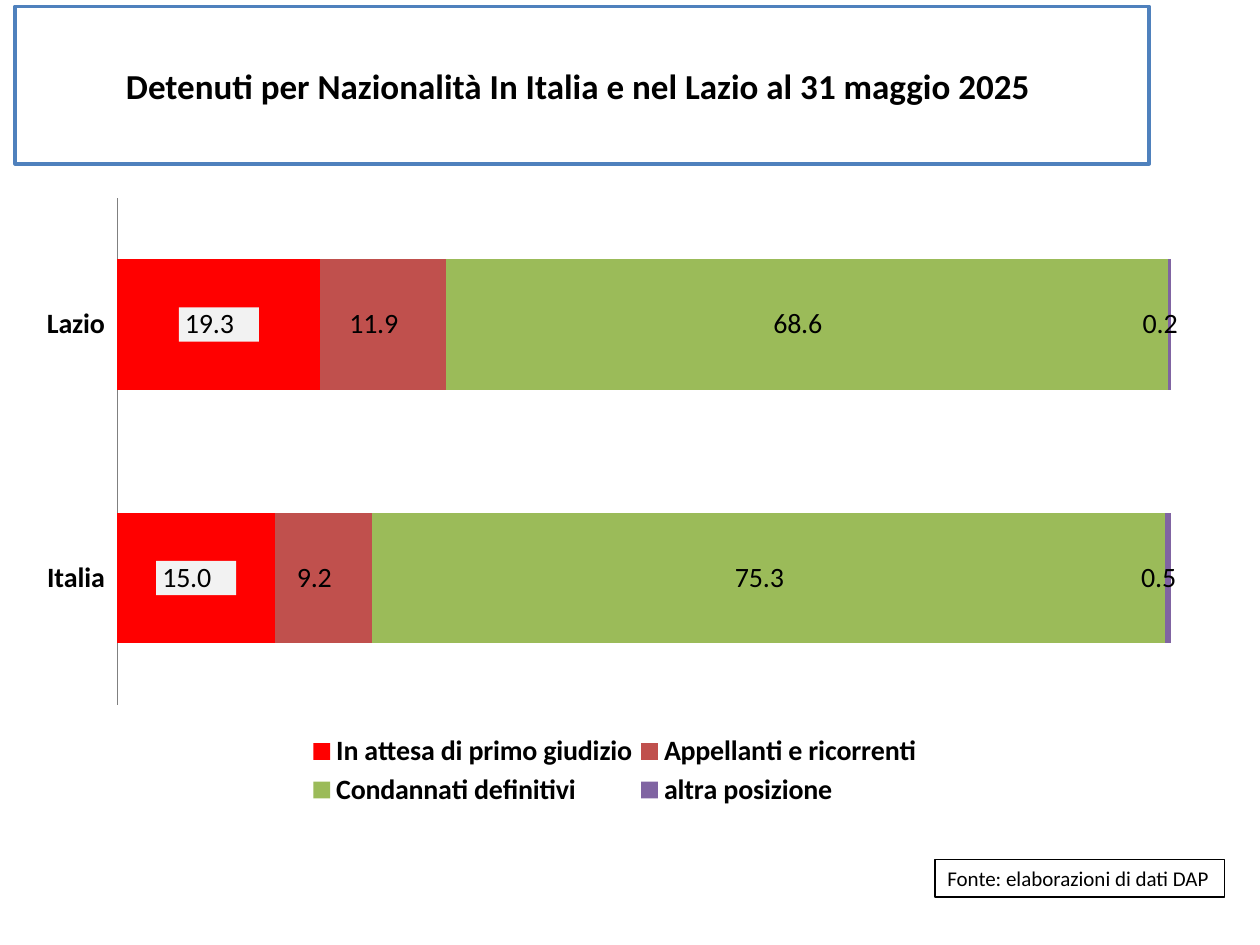
from typing import NamedTuple

from lxml import etree
from pptx import Presentation
from pptx.chart.data import CategoryChartData
from pptx.dml.color import RGBColor
from pptx.enum.chart import XL_CHART_TYPE as ChartType
from pptx.enum.chart import XL_LEGEND_POSITION as LegendPos
from pptx.enum.chart import XL_TICK_LABEL_POSITION as LabelPos
from pptx.enum.chart import XL_TICK_MARK as TickMark
from pptx.enum.text import MSO_ANCHOR, PP_ALIGN
from pptx.oxml import parse_xml
from pptx.oxml.ns import nsdecls, qn
from pptx.util import Inches, Pt

FONT = "Calibri"
NUMBER_FORMAT = r'_-* #,##0.0\ _€_-;\-* #,##0.0\ _€_-;_-* "-"??\ _€_-;_-@_-'


class Position(NamedTuple):
    name: str
    values: tuple[float, float]
    color: str
    label_fill: str | None = None


REGIONS = ("Lazio", "Italia")
POSITIONS = (
    Position("In attesa di primo giudizio", (19.3, 15.0), "FF0000", "F2F2F2"),
    Position("Appellanti e ricorrenti", (11.9, 9.2), "C0504D"),
    Position("Condannati definitivi", (68.6, 75.3), "9BBB59"),
    Position("altra posizione", (0.2, 0.5), "8064A2"),
)


def rgb(color: str) -> RGBColor:
    return RGBColor.from_string(color)


def set_font(font, size: float, bold: bool = False) -> None:
    font.name, font.size, font.bold = FONT, Pt(size), bold
    font.color.rgb = rgb("000000")


def place(sp, left: float, top: float, width: float, height: float) -> None:
    sp.left, sp.top = Inches(left), Inches(top)
    sp.width, sp.height = Inches(width), Inches(height)


def fill_box(sp, text: str, *, size: float, line: str, line_width: float,
             bold: bool = False, align=PP_ALIGN.LEFT, wrap: bool = True) -> None:
    """Write text in a white, outlined box."""
    sp.fill.solid()
    sp.fill.fore_color.rgb = rgb("FFFFFF")
    sp.line.color.rgb = rgb(line)
    sp.line.width = Pt(line_width)
    tf = sp.text_frame
    tf.word_wrap = wrap
    tf.vertical_anchor = MSO_ANCHOR.MIDDLE
    p = tf.paragraphs[0]
    p.alignment = align
    r = p.add_run()
    r.text = text
    set_font(r.font, size, bold)


def set_layout(parent, after: str, x: float, y: float, w: float, h: float,
               inner: bool = False) -> None:
    """Place a chart part by fractions of the chart area."""
    for old in parent.findall(qn("c:layout")):
        parent.remove(old)
    layout = etree.Element(qn("c:layout"))
    manual = etree.SubElement(layout, qn("c:manualLayout"))
    settings = [("layoutTarget", "inner")] if inner else []
    settings += [("xMode", "edge"), ("yMode", "edge"),
                 ("x", x), ("y", y), ("w", w), ("h", h)]
    for tag, value in settings:
        etree.SubElement(manual, qn(f"c:{tag}")).set("val", str(value))
    previous = parent.find(qn(after)) if after else None
    if previous is None:
        parent.insert(0, layout)
    else:
        previous.addnext(layout)


def style_series(series, position: Position) -> None:
    series.format.fill.solid()
    series.format.fill.fore_color.rgb = rgb(position.color)
    labels = series.data_labels
    labels.show_value = True
    labels.number_format = NUMBER_FORMAT
    labels.number_format_is_linked = False
    set_font(labels.font, 16)
    if position.label_fill:
        number_format = series._element.find(qn("c:dLbls")).find(qn("c:numFmt"))
        number_format.addnext(parse_xml(
            f'<c:spPr {nsdecls("c", "a")}><a:solidFill>'
            f'<a:srgbClr val="{position.label_fill}"/></a:solidFill></c:spPr>'))


def add_position_chart(slide) -> None:
    data = CategoryChartData(number_format=NUMBER_FORMAT)
    data.categories = REGIONS
    for position in POSITIONS:
        data.add_series(position.name, position.values)
    chart = slide.shapes.add_chart(
        ChartType.BAR_STACKED_100, Inches(0.28), Inches(1.47),
        Inches(9.29), Inches(4.97), data).chart
    set_font(chart.font, 16)
    chart.has_title = False

    plot = chart.plots[0]
    plot.gap_width, plot.overlap = 95, 100
    plot.vary_by_categories = False
    for series, position in zip(plot.series, POSITIONS):
        style_series(series, position)

    axis = chart.category_axis
    axis.reverse_order = True
    axis.major_tick_mark = axis.minor_tick_mark = TickMark.NONE
    axis.tick_label_position = LabelPos.LOW
    axis.format.line.color.rgb = rgb("808080")
    set_font(axis.tick_labels.font, 16, True)
    chart.value_axis.visible = False
    chart.value_axis.has_major_gridlines = False

    chart.has_legend = True
    legend = chart.legend
    legend.position = LegendPos.BOTTOM
    legend.include_in_layout = False
    set_font(legend.font, 16, True)
    plot_area = chart._chartSpace.chart.plotArea
    set_layout(plot_area, "", 0.07, 0.02, 0.9, 0.81, inner=True)
    set_layout(legend._element, "c:legendPos", 0.23, 0.87, 0.53, 0.13)


def main() -> None:
    prs = Presentation()
    prs.slide_width, prs.slide_height = Inches(10), Inches(7.5)
    slide = prs.slides.add_slide(prs.slide_layouts[5])

    title = slide.shapes.title
    place(title, 0.12, 0.05, 9, 1.25)
    fill_box(title, "Detenuti per Nazionalità In Italia e nel Lazio al 31 maggio 2025 ",
             size=20, bold=True, align=PP_ALIGN.CENTER, line="4F81BD", line_width=2)

    source = slide.shapes.add_textbox(Inches(7.42), Inches(6.82), Inches(2.3), Inches(0.3))
    fill_box(source, "Fonte: elaborazioni di dati DAP",
             size=12, line="000000", line_width=0.75, wrap=False)

    add_position_chart(slide)
    prs.save("out.pptx")


if __name__ == "__main__":
    main()
